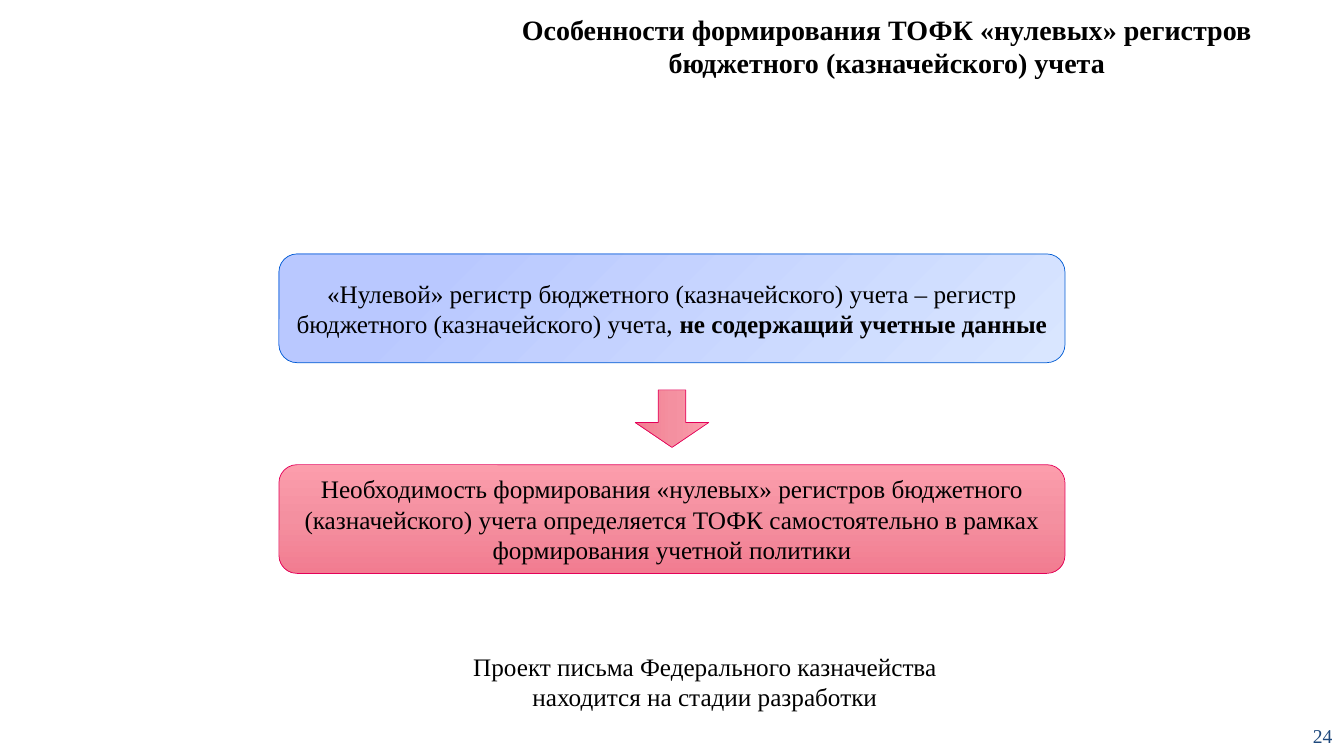
from pptx import Presentation
from pptx.dml.color import RGBColor
from pptx.enum.shapes import MSO_SHAPE
from pptx.enum.text import MSO_ANCHOR, PP_ALIGN
from pptx.oxml import parse_xml
from pptx.oxml.ns import nsdecls, qn
from pptx.util import Cm, Pt

FONT = "Times New Roman"
PAGE_NUMBER = "24"
TITLE = [
    [("Особенности формирования ТОФК «нулевых» регистров", True)],
    [("бюджетного (казначейского) учета", True)],
]
DEFINITION = [[
    ("«Нулевой» регистр бюджетного (казначейского) учета – регистр "
     "бюджетного (казначейского) учета, ", False),
    ("не содержащий учетные данные", True),
]]
NECESSITY = [[
    ("Необходимость формирования «нулевых» регистров бюджетного "
     "(казначейского) учета определяется ТОФК самостоятельно в рамках "
     "формирования учетной политики", False),
]]
DRAFT_NOTE = [[
    ("Проект письма Федерального казначейства находится на стадии разработки", False),
]]

BLUE = {
    "stops": [(18, "B9C8FF"), (100, "D9E6FF")],
    "direction": '<a:path path="circle"><a:fillToRect r="100000" b="100000"/></a:path>',
    "line": "005BD3",
}
PINK = {
    "stops": [(0, "FC9DAC"), (50, "F490A0"), (100, "F27C90")],
    "direction": '<a:lin ang="5400000" scaled="0"/>',
    "line": "E40059",
}

SLIDE_WIDTH, SLIDE_HEIGHT = 33.87, 19.05
PANEL_WIDTH, PANEL_HEIGHT = 19.81, 2.74
PANEL_LEFT = (SLIDE_WIDTH - PANEL_WIDTH) / 2
DEFINITION_TOP, NECESSITY_TOP = 6.4, 11.71
ARROW_LENGTH, ARROW_BREADTH = 1.45, 1.85
ARROW_MIDDLE = 10.55


def color(value):
    return RGBColor.from_string(value)


def write(shape, paragraphs, size=18, ink="000000", align=PP_ALIGN.CENTER,
          anchor=MSO_ANCHOR.MIDDLE, wrap=True):
    frame = shape.text_frame
    frame.word_wrap = wrap
    frame.vertical_anchor = anchor
    for index, pieces in enumerate(paragraphs):
        para = frame.add_paragraph() if index else frame.paragraphs[0]
        para.alignment = align
        for text, bold in pieces:
            span = para.add_run()
            span.text = text
            span.font.name = FONT
            span.font.size = Pt(size)
            span.font.bold = bold
            span.font.color.rgb = color(ink)


def add_text(page, place, paragraphs, **look):
    box = page.shapes.add_textbox(*map(Cm, place))
    write(box, paragraphs, **look)


def add_figure(page, kind, place, style, adjustments):
    shape = page.shapes.add_shape(kind, *map(Cm, place))
    shape.shadow.inherit = False
    for index, value in enumerate(adjustments):
        shape.adjustments[index] = value
    shape.line.color.rgb = color(style["line"])
    shape.line.width = Pt(0.5)
    shape.fill.gradient()
    stops = "".join(
        f'<a:gs pos="{position * 1000}"><a:srgbClr val="{value}"/></a:gs>'
        for position, value in style["stops"]
    )
    gradient = parse_xml(
        f'<a:gradFill {nsdecls("a")} rotWithShape="1">'
        f'<a:gsLst>{stops}</a:gsLst>{style["direction"]}</a:gradFill>'
    )
    properties = shape._element.spPr
    properties.replace(properties.find(qn("a:gradFill")), gradient)
    return shape


def add_panel(page, top, style, paragraphs):
    place = (PANEL_LEFT, top, PANEL_WIDTH, PANEL_HEIGHT)
    panel = add_figure(page, MSO_SHAPE.ROUNDED_RECTANGLE, place, style, [0.167])
    write(panel, paragraphs)


def main():
    deck = Presentation()
    deck.slide_width, deck.slide_height = Cm(SLIDE_WIDTH), Cm(SLIDE_HEIGHT)
    page = deck.slides.add_slide(deck.slide_layouts[6])

    add_text(page, (32.66, 18.14, 1.17, 0.81), [[(PAGE_NUMBER, False)]],
             size=14, ink="1F497D", align=PP_ALIGN.RIGHT, wrap=False)
    add_panel(page, DEFINITION_TOP, BLUE, DEFINITION)
    add_text(page, (10.87, 0.18, 22.96, 1.96), TITLE, size=20, anchor=MSO_ANCHOR.TOP)

    arrow_place = ((SLIDE_WIDTH - ARROW_LENGTH) / 2, ARROW_MIDDLE - ARROW_BREADTH / 2,
                   ARROW_LENGTH, ARROW_BREADTH)
    arrow = add_figure(page, MSO_SHAPE.RIGHT_ARROW, arrow_place, PINK, [0.372, 0.432])
    arrow.rotation = 90

    add_panel(page, NECESSITY_TOP, PINK, NECESSITY)
    add_text(page, (11.15, 16.28, 13.23, 1.8), DRAFT_NOTE)
    deck.save("out.pptx")


if __name__ == "__main__":
    main()
